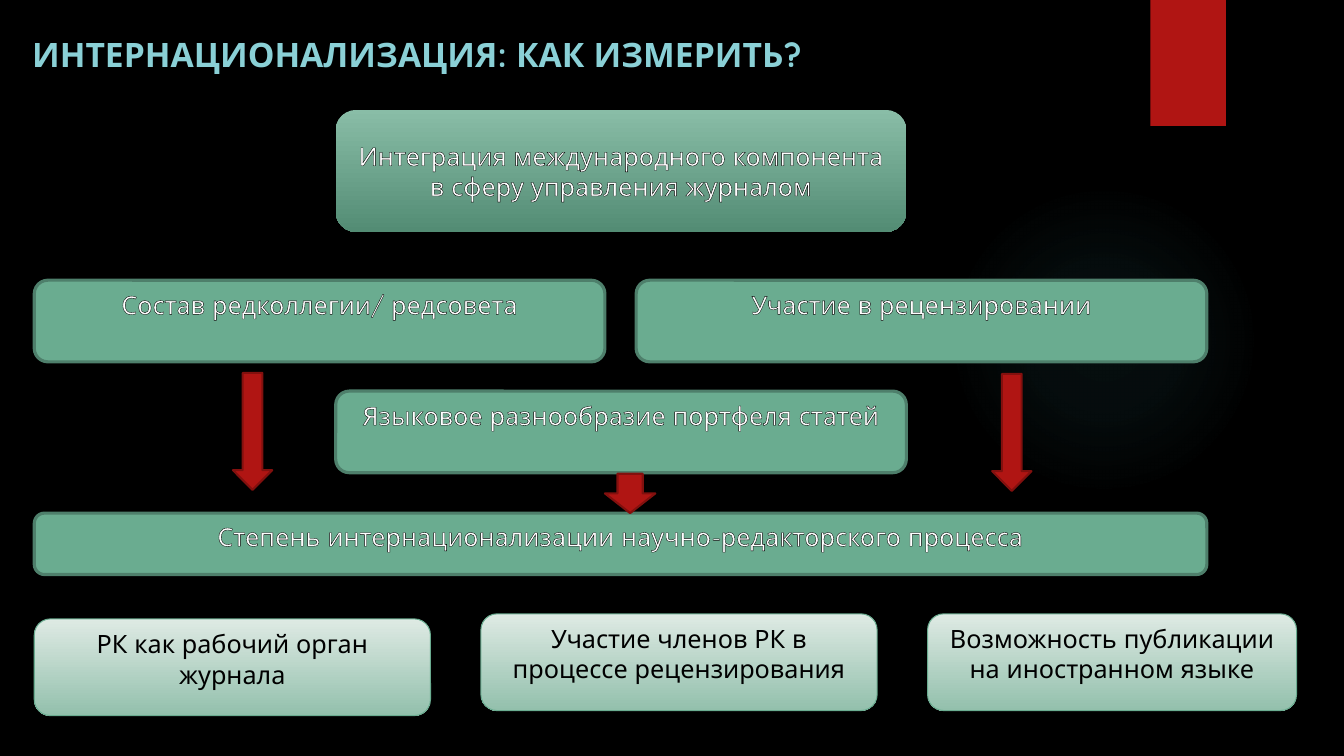
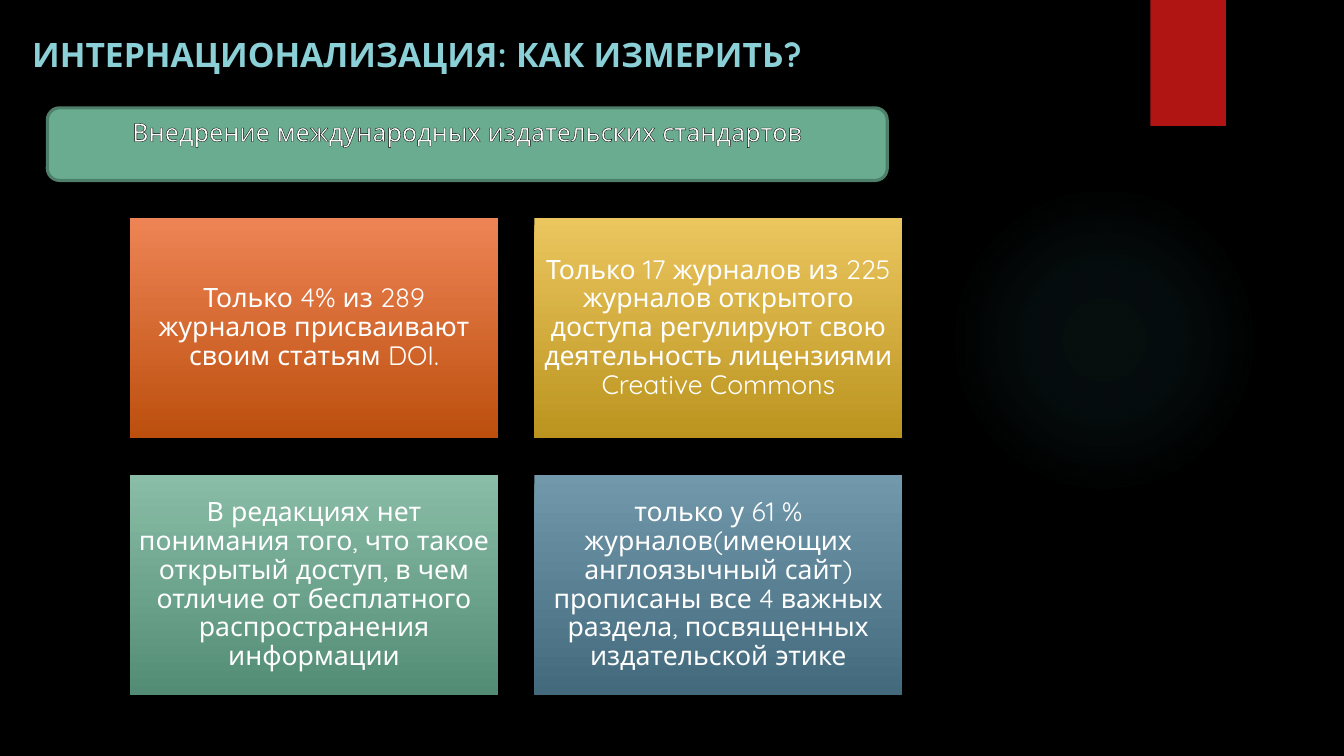
from lxml import etree
from pptx import Presentation
from pptx.dml.color import RGBColor
from pptx.enum.shapes import MSO_SHAPE as Shape
from pptx.enum.text import MSO_ANCHOR as Anchor, PP_ALIGN as Align
from pptx.oxml import parse_xml
from pptx.oxml.ns import qn
from pptx.util import Inches, Pt

FONT = "Quicksand"
BLACK = RGBColor(0x00, 0x00, 0x00)
WHITE = RGBColor(0xFF, 0xFF, 0xFF)
TITLE_BLUE = RGBColor(0x8A, 0xD0, 0xD6)
RED = RGBColor(0xB0, 0x15, 0x13)
DARK_RED = RGBColor(0x82, 0x10, 0x0E)
GREEN = RGBColor(0x6A, 0xAC, 0x90)
DARK_GREEN = RGBColor(0x4E, 0x7F, 0x6B)
GLOW = RGBColor(0x50, 0xB9, 0xC1)

GREEN_FADE = (RGBColor(0x89, 0xBD, 0xA7), RGBColor(0x53, 0x8C, 0x74))
PALE_FADE = (RGBColor(0xDE, 0xEA, 0xE4), RGBColor(0x93, 0xC0, 0xAC))
ORANGE_FADE = (RGBColor(0xEE, 0x84, 0x55), RGBColor(0xBC, 0x4F, 0x0E))
YELLOW_FADE = (RGBColor(0xEB, 0xC6, 0x5F), RGBColor(0xBB, 0x94, 0x1F))
BLUE_FADE = (RGBColor(0x71, 0x98, 0xAB), RGBColor(0x43, 0x6A, 0x7C))

TITLE = "ИНТЕРНАЦИОНАЛИЗАЦИЯ: КАК ИЗМЕРИТЬ?"


def add_box(slide, kind, box, fill, line=None, line_width=0):
    """Add a preset shape; fill is one colour or a (top, bottom) pair."""
    shape = slide.shapes.add_shape(kind, *map(Inches, box))
    shape.shadow.inherit = False
    if isinstance(fill, RGBColor):
        shape.fill.solid()
        shape.fill.fore_color.rgb = fill
    else:
        shape.fill.gradient()
        shape.fill.gradient_angle = 270
        for stop, color in zip(shape.fill.gradient_stops, fill):
            stop.color.rgb = color
    if line is None:
        shape.line.fill.background()
    else:
        shape.line.color.rgb = line
        shape.line.width = Pt(line_width)
    return shape


def write(shape, text, size, color, align=Align.CENTER, anchor=Anchor.TOP, bold=False):
    frame = shape.text_frame
    frame.word_wrap = True
    frame.vertical_anchor = anchor
    frame.text = text
    paragraph = frame.paragraphs[0]
    paragraph.alignment = align
    font = paragraph.runs[0].font
    font.name, font.size, font.bold = FONT, Pt(size), bold
    font.color.rgb = color
    return paragraph


def outline_text(paragraph):
    properties = paragraph.runs[0].font._element
    line = etree.Element(qn("a:ln"), w=str(Pt(0.75)))
    fill = etree.SubElement(line, qn("a:solidFill"))
    etree.SubElement(fill, qn("a:srgbClr"), val=str(BLACK))
    properties.insert(0, parse_xml(etree.tostring(line)))


def add_label(slide, box, text, fill=GREEN, line=DARK_GREEN, line_width=2.25,
              color=WHITE, anchor=Anchor.TOP):
    """Rounded box with outlined text."""
    shape = add_box(slide, Shape.ROUNDED_RECTANGLE, box, fill, line, line_width)
    outline_text(write(shape, text, 18, color, anchor=anchor))


def add_glow(slide, box):
    """Circle that fades out from its centre."""
    glow = add_box(slide, Shape.OVAL, box, GLOW)
    properties = glow._element.spPr
    gradient = etree.Element(qn("a:gradFill"))
    stops = etree.SubElement(gradient, qn("a:gsLst"))
    for position, alpha in ((0, 7), (36, 6), (69, 0)):
        stop = etree.SubElement(stops, qn("a:gs"), pos=str(position * 1000))
        color = etree.SubElement(stop, qn("a:srgbClr"), val=str(GLOW))
        etree.SubElement(color, qn("a:alpha"), val=str(alpha * 1000))
    circle = etree.SubElement(gradient, qn("a:path"), path="circle")
    etree.SubElement(circle, qn("a:fillToRect"), l="50000", t="50000", r="50000", b="50000")
    properties.replace(properties.find(qn("a:solidFill")), gradient)


def add_base_slide(presentation):
    """Slide with the shared glow, red band and title."""
    slide = presentation.slides.add_slide(presentation.slide_layouts[6])
    add_glow(slide, (9.41, 1.83, 3.08, 3.08))
    add_box(slide, Shape.RECTANGLE, (11.41, 0, 0.75, 1.25), RED)
    title = slide.shapes.add_textbox(*map(Inches, (0.22, 0.29, 10.48, 0.94)))
    write(title, TITLE, 24, TITLE_BLUE, Align.LEFT, bold=True)
    return slide


def add_criteria(slide, left, top):
    """Heading, three criteria and the bar they lead to."""
    width, height, gap = 5.66, 0.81, 0.31
    middle = left + 2.99
    add_label(slide, (middle, top, width, 1.21),
              "Интеграция международного компонента в сферу управления журналом",
              GREEN_FADE, None, anchor=Anchor.MIDDLE)
    for x, y, text in (
        (left, top + 1.69, "Состав редколлегии/ редсовета"),
        (left + width + gap, top + 1.69, "Участие в рецензировании"),
        (middle, top + 2.79, "Языковое разнообразие портфеля статей"),
    ):
        add_label(slide, (x, y, width, height), text)
    add_label(slide, (left, top + 4, 2 * width + gap, 0.61),
              "Степень интернационализации научно-редакторского процесса")
    for x, y, arrow_width, arrow_height in (
        (1.97, 2.61, 0.39, 1.16),
        (9.5, 2.62, 0.39, 1.16),
        (5.66, 3.61, 0.5, 0.39),
    ):
        add_box(slide, Shape.DOWN_ARROW, (left + x, top + y, arrow_width, arrow_height),
                RED, DARK_RED, 1.5)


def add_outcomes(slide, left, top):
    for x, y, width, text in (
        (0, 0.05, 3.93, "РК как рабочий орган журнала"),
        (4.43, 0, 3.93, "Участие членов РК в процессе рецензирования"),
        (8.86, 0, 3.66, "Возможность публикации на иностранном языке"),
    ):
        add_label(slide, (left + x, top + y, width, 0.96), text,
                  PALE_FADE, GREEN, 0.75, BLACK)


def add_fact_grid(slide, left, top, facts, columns=2):
    width, height, gap = 3.65, 2.19, 0.36
    for index, (fill, text) in enumerate(facts):
        row, column = divmod(index, columns)
        box = (left + column * (width + gap), top + row * (height + gap), width, height)
        card = add_box(slide, Shape.RECTANGLE, box, fill)
        frame = card.text_frame
        frame.margin_left = frame.margin_right = Inches(0.08)
        frame.margin_top = frame.margin_bottom = Inches(0.08)
        write(card, text, 19, WHITE, anchor=Anchor.MIDDLE).line_spacing = 0.9


def build_process_slide(presentation):
    slide = add_base_slide(presentation)
    add_criteria(slide, 0.34, 1.09)
    add_outcomes(slide, 0.34, 6.09)


def build_standards_slide(presentation):
    slide = add_base_slide(presentation)
    add_label(slide, (0.47, 1.07, 8.33, 0.72),
              "Внедрение международных издательских стандартов")
    add_fact_grid(slide, 1.29, 2.16, (
        (ORANGE_FADE, "Только 4% из 289 журналов присваивают своим статьям DOI."),
        (YELLOW_FADE, "Только 17 журналов из 225 журналов открытого доступа регулируют "
                      "свою деятельность лицензиями Creative Commons"),
        (GREEN_FADE, "В редакциях нет понимания того, что такое открытый доступ, "
                     "в чем отличие от бесплатного распространения информации"),
        (BLUE_FADE, "только у 61 % журналов(имеющих англоязычный сайт) прописаны все "
                    "4 важных раздела, посвященных издательской этике"),
    ))


def main():
    presentation = Presentation()
    presentation.slide_width = Inches(13.33)
    presentation.slide_height = Inches(7.5)
    background = presentation.slide_master.background.fill
    background.solid()
    background.fore_color.rgb = BLACK
    build_process_slide(presentation)
    build_standards_slide(presentation)
    presentation.save("out.pptx")


if __name__ == "__main__":
    main()
